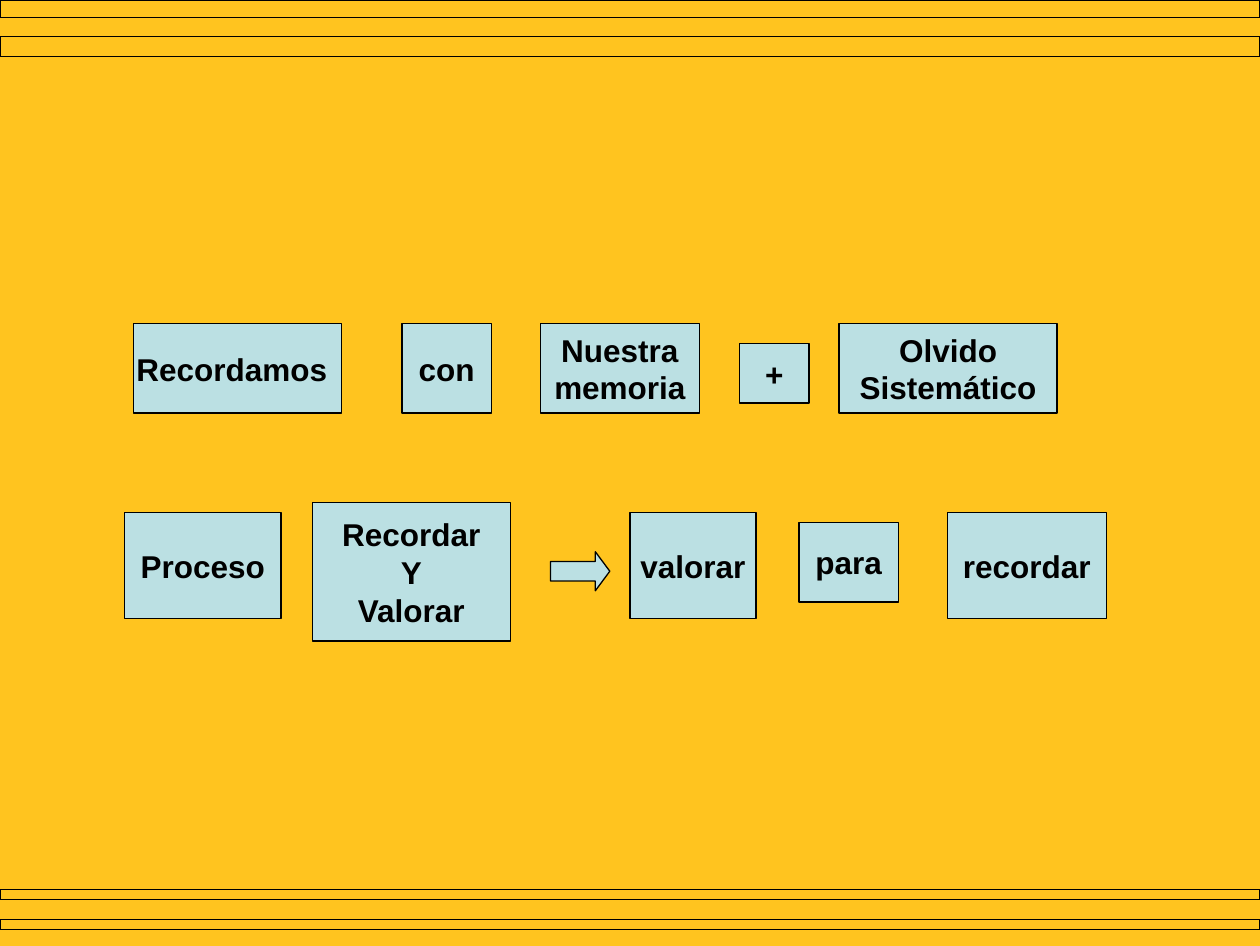
import pptx
import pptx.util
import pptx.dml.color
import pptx.enum.shapes
import pptx.enum.text

Inches = pptx.util.Inches
KIND = pptx.enum.shapes.MSO_SHAPE
INK, PALE, GOLD = "000000", "BBE0E3", "FFC41F"


def paint(fill, tone):
    fill.solid()
    fill.fore_color.rgb = pptx.dml.color.RGBColor.from_string(tone)


def shape(slide, kind, left, top, width, height, tone=None):
    item = slide.shapes.add_shape(
        kind, Inches(left), Inches(top), Inches(width), Inches(height))
    item.shadow.inherit = False
    if tone:
        paint(item.fill, tone)
    else:
        item.fill.background()
    paint(item.line.fill, INK)
    item.line.width = pptx.util.Pt(0.75)
    return item


def label(slide, text, left, top, width, height, right=0):
    frame = shape(slide, KIND.RECTANGLE, left, top, width, height, PALE).text_frame
    frame.margin_left = frame.margin_top = frame.margin_bottom = 0
    frame.margin_right = Inches(right)
    frame.word_wrap = True
    frame.vertical_anchor = pptx.enum.text.MSO_ANCHOR.MIDDLE
    frame.text = text
    for para in frame.paragraphs:
        para.alignment = pptx.enum.text.PP_ALIGN.CENTER
        para.font.name = "Arial"
        para.font.size = pptx.util.Pt(18)
        para.font.bold = True
        paint(para.font.fill, INK)


def bands(slide, left, top, width, parts):
    for down, height in parts:
        shape(slide, KIND.RECTANGLE, left, top + down, width, height)


def memory(slide, left, top):
    tall = 0.71
    label(slide, "Recordamos", left, top, 1.65, tall, 0.09)
    label(slide, "con", left + 2.13, top, 0.71, tall)
    label(slide, "Nuestra memoria", left + 3.23, top, 1.26, tall)
    label(slide, "+", left + 4.81, top + 0.16, 0.55, 0.47)
    label(slide, "Olvido Sistemático", left + 5.6, top, 1.73, tall)


def process(slide, left, top):
    tall = 0.84
    label(slide, "Proceso", left, top + 0.08, 1.24, tall)
    label(slide, "Recordar\vY\nValorar", left + 1.49, top, 1.57, 1.1)
    arrow = shape(slide, KIND.RIGHT_ARROW, left + 3.38, top + 0.39, 0.47, 0.31, PALE)
    arrow.adjustments[1] = 0.37
    label(slide, "valorar", left + 4.01, top + 0.08, 1, tall)
    label(slide, "para", left + 5.35, top + 0.16, 0.79, 0.63)
    label(slide, "recordar", left + 6.53, top + 0.08, 1.26, tall)


def main():
    deck = pptx.Presentation()
    deck.slide_width, deck.slide_height = Inches(10), Inches(7.51)
    slide = deck.slides.add_slide(deck.slide_layouts[6])
    paint(slide.background.fill, GOLD)
    bands(slide, 0, 0, 10, [(0, 0.14), (0.29, 0.16)])
    bands(slide, 0, 7.06, 10, [(0, 0.08), (0.24, 0.08)])
    memory(slide, 1.06, 2.57)
    process(slide, 0.99, 3.99)
    deck.save("out.pptx")


if __name__ == "__main__":
    main()
